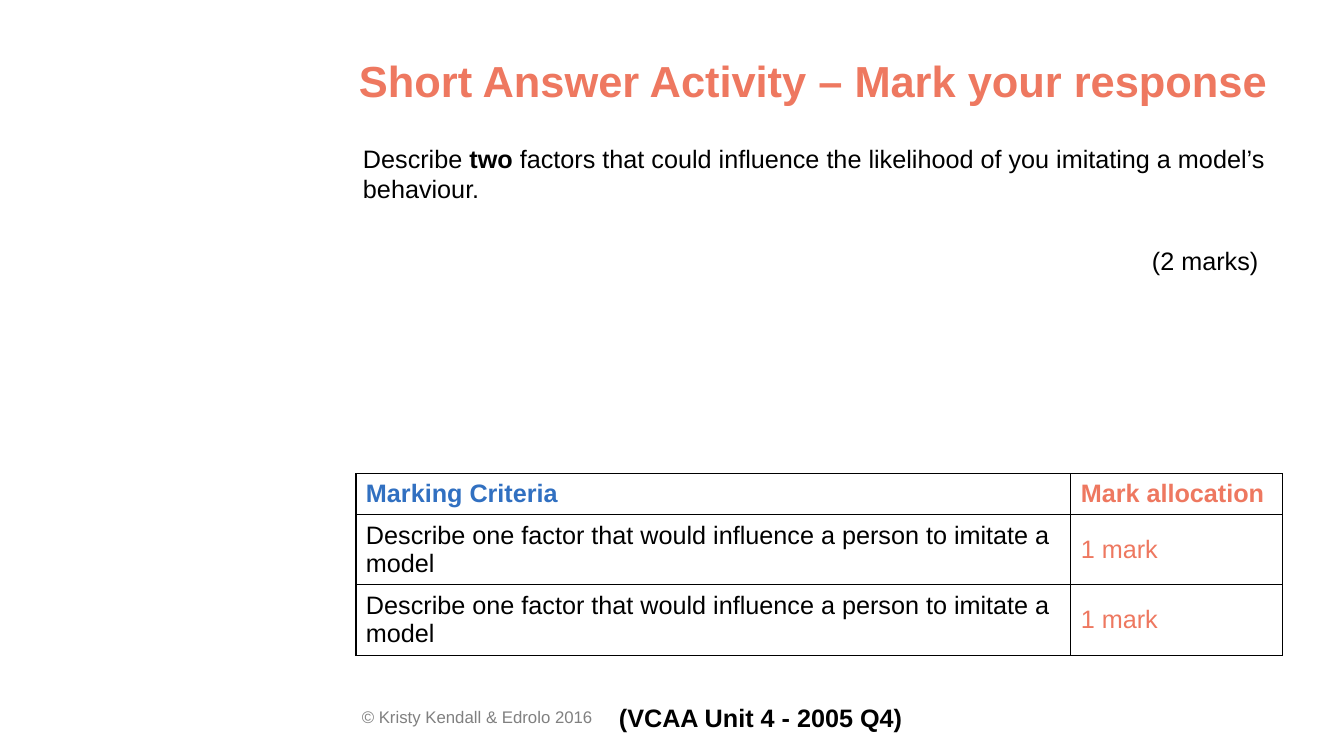
from lxml.etree import SubElement
from pptx import Presentation
from pptx.dml.color import RGBColor as Rgb
from pptx.enum.text import MSO_ANCHOR as Anchor, PP_ALIGN as Align
from pptx.oxml.ns import qn
from pptx.util import Inches, Pt

INK = {"black": "000000", "coral": "EE7860", "blue": "3170C1",
       "grey": "808080", "white": "FFFFFF"}
TIGHT = (0.07, 0.04)
LOOSE = (0.1, 0.05)


def add_run(par, text, size=18, ink="black", bold=False):
    run = par.add_run()
    run.text = text
    font = run.font
    font.name, font.size, font.bold = "Arial", Pt(size), bold
    font.color.rgb = Rgb.from_string(INK[ink])


def add_box(slide, box, inset=LOOSE, wrap=True):
    frame = slide.shapes.add_textbox(*map(Inches, box)).text_frame
    frame.word_wrap = wrap
    frame.margin_left = frame.margin_right = Inches(inset[0])
    frame.margin_top = frame.margin_bottom = Inches(inset[1])
    return frame


def add_title(slide, box):
    par = add_box(slide, box, TIGHT).paragraphs[0]
    add_run(par, "Short Answer Activity – Mark your response", 31, "coral", True)


def add_task(slide, box):
    frame = add_box(slide, box, TIGHT)
    task = frame.paragraphs[0]
    add_run(task, "Describe ")
    add_run(task, "two ", bold=True)
    add_run(task, "factors that could influence the likelihood of you "
                  "imitating a model’s behaviour.")
    marks = frame.add_paragraph()
    marks.alignment = Align.RIGHT
    marks.space_before = Pt(29.5)
    add_run(marks, "(2 marks) ")


def add_border(cell):
    props = cell._tc.get_or_add_tcPr()
    for pos, side in enumerate(("lnL", "lnR", "lnT", "lnB")):
        line = props.makeelement(qn("a:" + side), {"w": str(Pt(1))})
        fill = SubElement(line, qn("a:solidFill"))
        SubElement(fill, qn("a:srgbClr"), val=INK["black"])
        props.insert(pos, line)  # borders come before the fill


def add_marks(slide, box):
    rows = [("Marking Criteria", "Mark allocation")]
    rows += [("Describe one factor that would influence a person to "
              "imitate a model", "1 mark")] * 2
    table = slide.shapes.add_table(len(rows), 2, *map(Inches, box)).table
    split = 7.09
    for col, width in zip(table.columns, (split, box[2] - split)):
        col.width = Inches(width)
    for r, texts in enumerate(rows):
        head = r == 0
        table.rows[r].height = Inches(0.4 if head else 0.7)
        inks = ("blue" if head else "black", "coral")
        for c, (text, ink) in enumerate(zip(texts, inks)):
            cell = table.cell(r, c)
            cell.vertical_anchor = Anchor.MIDDLE
            cell.fill.solid()
            cell.fill.fore_color.rgb = Rgb.from_string(INK["white"])
            add_border(cell)
            add_run(cell.text_frame.paragraphs[0], text, ink=ink, bold=head)


def add_foot(slide, box):
    left, top, width, height = box
    # Copyright line
    note = add_box(slide, (left, top + 0.04, 4.5, height))
    add_run(note.paragraphs[0], "© Kristy Kendall & Edrolo 2016", 12, "grey")
    # Exam reference
    shift = 2.55
    exam = add_box(slide, (left + shift, top, width - shift, height), wrap=False)
    add_run(exam.paragraphs[0], "(VCAA Unit 4 - 2005 Q4)", bold=True)


def main():
    deck = Presentation()
    deck.slide_width, deck.slide_height = Inches(13.33), Inches(7.5)
    slide = deck.slides.add_slide(deck.slide_layouts[6])
    add_task(slide, (3.53, 1.38, 9.09, 2.2))
    add_title(slide, (3.49, 0.5, 9.61, 0.83))
    add_marks(slide, (3.53, 4.7, 9.19, 1.8))
    add_foot(slide, (3.49, 6.92, 5.66, 0.4))
    deck.save("out.pptx")


if __name__ == "__main__":
    main()
